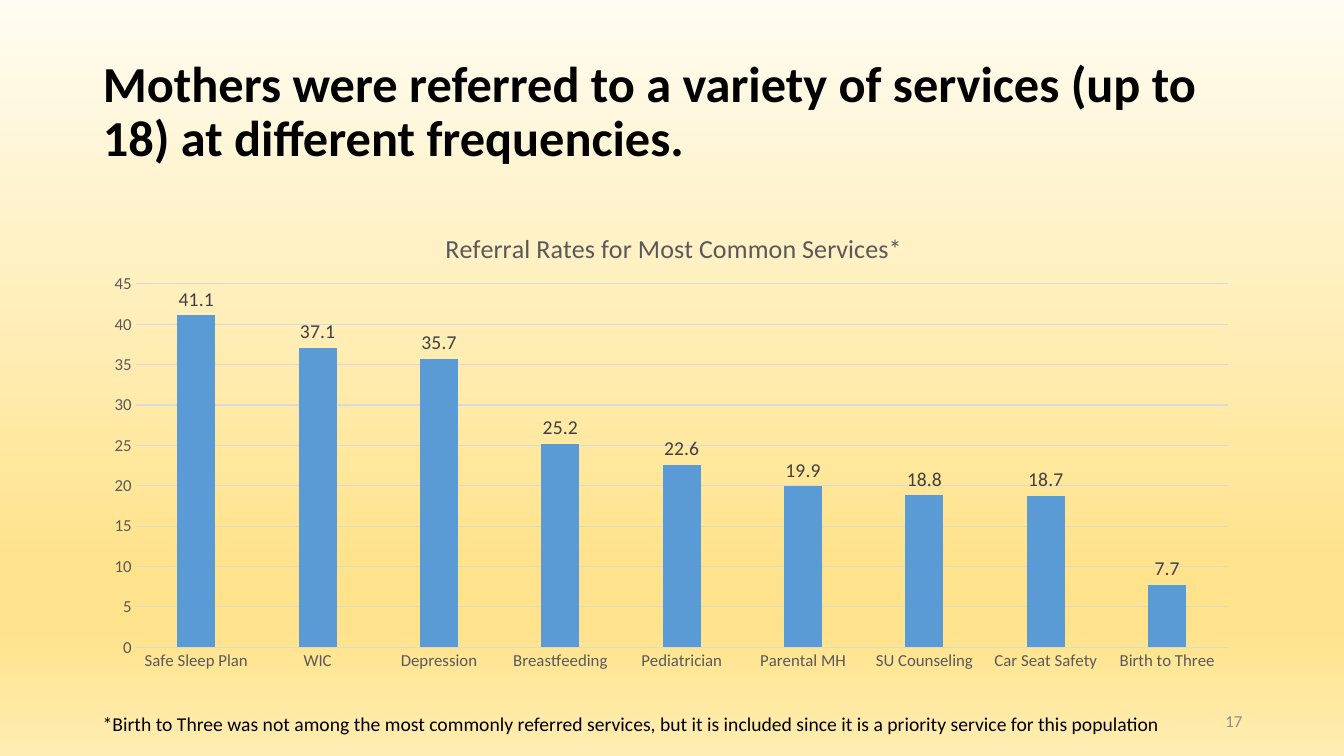
"""Build the slide on referral rates for mothers."""
from lxml import etree
from pptx import Presentation
from pptx.chart import data as cd
from pptx.dml import color
from pptx.enum import chart as ec, text
from pptx.oxml import parse_xml
from pptx.oxml import ns
from pptx.util import Inches, Pt

FONT = "Calibri"
W, H = 13.33, 7.5
LEFT, WIDTH = 0.92 / W, 11.5 / W
COLORS = {"ink": "000000", "axis": "595959", "grid": "D9D9D9", "bar": "5B9BD5",
          "label": "404040", "number": "8C8C8C"}
BACKDROP = [(0, "FFFCF2"), (74, "FFE38C"), (83, "FFE38C"), (100, "FFECB2")]
RATES = {"Safe Sleep Plan": 41.1, "WIC": 37.1, "Depression": 35.7,
         "Breastfeeding": 25.2, "Pediatrician": 22.6, "Parental MH": 19.9,
         "SU Counseling": 18.8, "Car Seat Safety": 18.7, "Birth to Three": 7.7}


def rgb(name):
    return color.RGBColor.from_string(COLORS[name])


def box(x, y, w, h):
    """Turn shares of the slide into lengths."""
    return Inches(x * W), Inches(y * H), Inches(w * W), Inches(h * H)


def style(font, size, name, bold=False):
    font.name, font.size, font.bold = FONT, Pt(size), bold
    font.color.rgb = rgb(name)


def write(tf, words, size=14, name="ink", bold=False, align=text.PP_ALIGN.LEFT,
          anchor=text.MSO_ANCHOR.TOP, wrap=True, spacing=None):
    """Put one formatted paragraph in a text frame."""
    tf.word_wrap, tf.vertical_anchor = wrap, anchor
    tf.auto_size = text.MSO_AUTO_SIZE.NONE
    p = tf.paragraphs[0]
    p.alignment, p.line_spacing = align, spacing
    r = p.add_run()
    r.text = words
    style(r.font, size, name, bold)


def paint_background(s):
    """Fill the background with the vertical gradient."""
    fill = s.background.fill
    fill.gradient()
    fill.gradient_angle = 270
    stops = fill.gradient_stops[0]._gs.getparent()
    for gs in list(stops):
        stops.remove(gs)
    for share, value in BACKDROP:
        gs = etree.SubElement(stops, ns.qn("a:gs"), pos=str(share * 1000))
        etree.SubElement(gs, ns.qn("a:srgbClr"), val=value)


def place(parent, **shares):
    """Fix a chart part at shares of the chart's size."""
    for old in parent.findall(ns.qn("c:layout")):
        parent.remove(old)
    layout = parse_xml(f"<c:layout {ns.nsdecls('c')}><c:manualLayout/></c:layout>")
    if "w" in shares:
        etree.SubElement(layout[0], ns.qn("c:layoutTarget"), val="inner")
    for key in "xy":
        etree.SubElement(layout[0], ns.qn(f"c:{key}Mode"), val="edge")
    for key, share in shares.items():
        etree.SubElement(layout[0], ns.qn(f"c:{key}"), val=str(share))
    tx = parent.find(ns.qn("c:tx"))
    parent.insert(0 if tx is None else 1, layout)


def format_axis(axis):
    axis.major_tick_mark = axis.minor_tick_mark = ec.XL_TICK_MARK.NONE
    style(axis.tick_labels.font, 12, "axis")


def draw_line(line):
    line.color.rgb, line.width = rgb("grid"), Pt(0.75)


def add_rates(s, frame):
    """Add the column chart of referral rates."""
    data = cd.CategoryChartData()
    data.categories = list(RATES)
    data.add_series("Series 1", list(RATES.values()))
    ch = s.shapes.add_chart(ec.XL_CHART_TYPE.COLUMN_CLUSTERED, *frame, data).chart
    style(ch.font, 10, "ink")
    ch.has_legend = False
    write_title = ch.chart_title.text_frame.paragraphs[0].add_run()
    write_title.text = "Referral Rates for Most Common Services*"
    style(write_title.font, 18.6, "axis")
    ch.chart_title.include_in_layout = False
    place(ch.chart_title._element, x=0.3, y=0.05)
    place(ch._chartSpace.chart.plotArea, x=0.037, y=0.171, w=0.942, h=0.757)

    cats, vals = ch.category_axis, ch.value_axis
    for axis in (cats, vals):
        format_axis(axis)
    draw_line(cats.format.line)
    vals.format.line.fill.background()
    draw_line(vals.major_gridlines.format.line)
    vals.minimum_scale, vals.maximum_scale, vals.major_unit = 0, 45, 5

    plot = ch.plots[0]
    plot.gap_width, plot.overlap, plot.vary_by_categories = 219, -27, False
    bars = plot.series[0]
    bars.format.fill.solid()
    bars.format.fill.fore_color.rgb = rgb("bar")
    labels = bars.data_labels
    labels.show_value, labels.position = True, ec.XL_LABEL_POSITION.OUTSIDE_END
    style(labels.font, 14, "label")


def main():
    prs = Presentation()
    prs.slide_width, prs.slide_height = Inches(W), Inches(H)
    s = prs.slides.add_slide(prs.slide_layouts[5])
    paint_background(s)
    title = s.shapes.title
    title.left, title.top, title.width, title.height = box(LEFT, 0.053, WIDTH, 0.193)
    write(title.text_frame, "Mothers were referred to a variety of services (up to 18) "
          "at different frequencies.", size=36, bold=True,
          anchor=text.MSO_ANCHOR.MIDDLE, spacing=0.9)
    add_rates(s, box(LEFT, 0.267, WIDTH, 0.635))
    number = s.shapes.add_textbox(*box(LEFT + WIDTH - 0.225, 0.927, 0.225, 0.053))
    write(number.text_frame, "17", size=12, name="number",
          align=text.PP_ALIGN.RIGHT, anchor=text.MSO_ANCHOR.MIDDLE)
    note = s.shapes.add_textbox(*box(LEFT, 0.935, 0.806, 0.045))
    write(note.text_frame, "*Birth to Three was not among the most commonly referred "
          "services, but it is included since it is a priority service for this "
          "population", wrap=False)
    prs.save("out.pptx")


if __name__ == "__main__":
    main()
